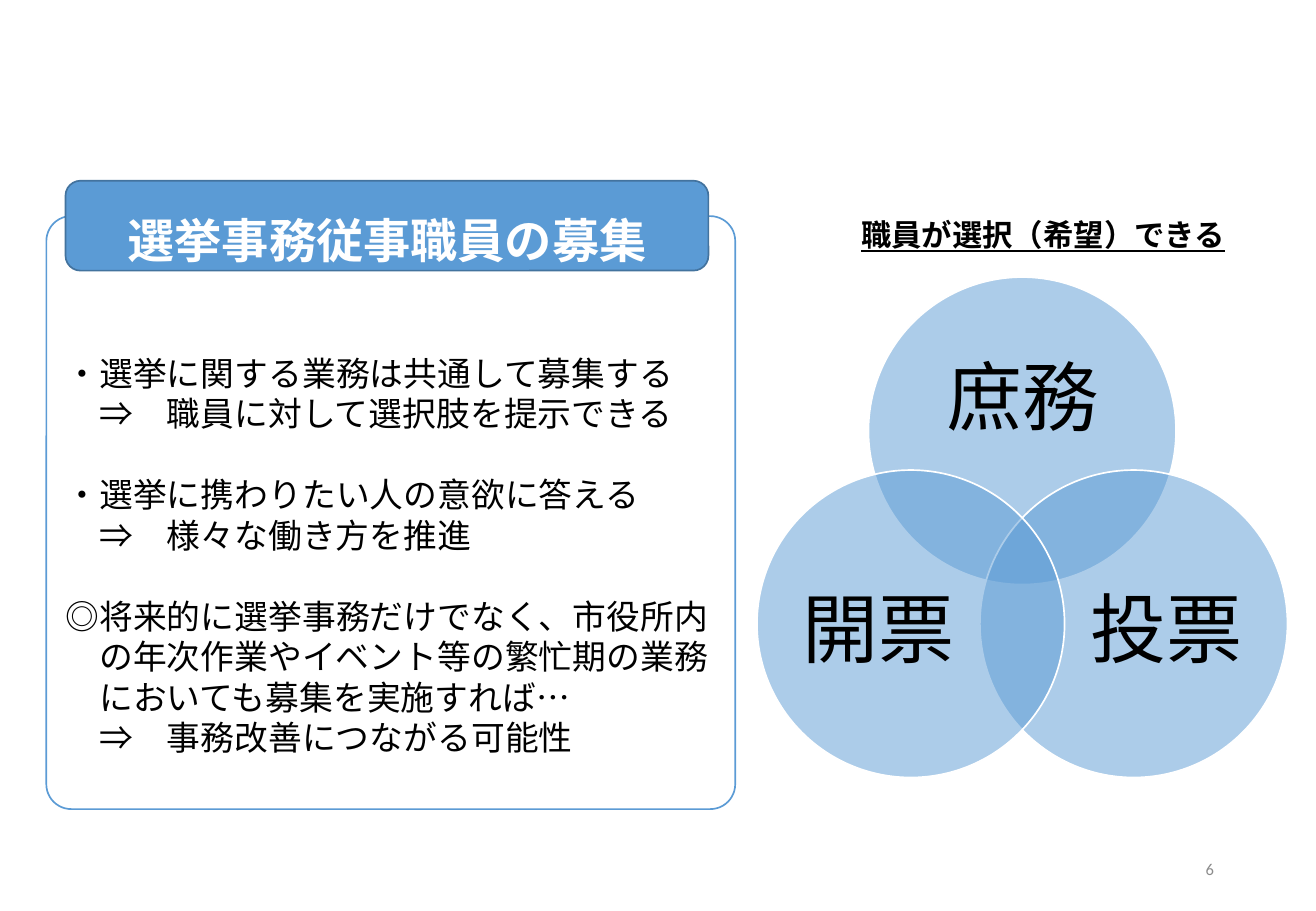
from dataclasses import dataclass
from math import cos, radians, sin

from lxml.etree import SubElement
from pptx import Presentation
from pptx.dml.color import RGBColor as RGB
from pptx.enum.shapes import MSO_SHAPE as Shp
from pptx.enum.text import MSO_ANCHOR as Anchor, MSO_AUTO_SIZE as Fit, PP_ALIGN as Align
from pptx.oxml.ns import qn
from pptx.shapes.autoshape import Shape
from pptx.slide import Slide
from pptx.text.text import TextFrame, _Paragraph as Para
from pptx.util import Cm, Pt


@dataclass(frozen=True)
class Theme:
    blue: RGB = RGB(0x5B, 0x9B, 0xD5)
    dark_blue: RGB = RGB(0x43, 0x73, 0x9E)
    white: RGB = RGB(0xFF, 0xFF, 0xFF)
    black: RGB = RGB(0, 0, 0)
    grey: RGB = RGB(0x8C, 0x8C, 0x8C)
    font: str = "Noto Sans CJK JP"
    number_font: str = "Calibri"
    title: float = 28
    heading: float = 18
    body: float = 20
    label: float = 45
    number: float = 9.8
    leading: float = 24


@dataclass(frozen=True)
class Box:
    left: float
    top: float
    width: float
    height: float

    def lengths(self) -> tuple[Cm, Cm, Cm, Cm]:
        return Cm(self.left), Cm(self.top), Cm(self.width), Cm(self.height)


@dataclass(frozen=True)
class Point:
    text: str
    marked: bool = False
    gap: bool = False


@dataclass(frozen=True)
class Duty:
    name: str
    angle: int
    label: Box


THEME = Theme()
CARD = Box(0.97, 4.52, 14.4, 12.4)
BANNER = Box(1.37, 3.78, 13.44, 1.88)
HEADING = Box(17.75, 4.39, 8.59, 1.02)
NUMBER = Box(19.43, 17.65, 6.2, 1.02)
VENN_X, VENN_Y, VENN_RADIUS, CIRCLE = 21.37, 11.7, 2.69, 6.43

POINTS = [
    Point("・選挙に関する業務は共通して募集する", marked=True),
    Point("⇒　職員に対して選択肢を提示できる"),
    Point("・選挙に携わりたい人の意欲に答える", marked=True, gap=True),
    Point("⇒　様々な働き方を推進"),
    Point("◎将来的に選挙事務だけでなく、市役所内の年次作業やイベント等の繁忙期の業務"
          "においても募集を実施すれば…", marked=True, gap=True),
    Point("⇒　事務改善につながる可能性"),
]
DUTIES = [
    Duty("庶務", -90, Box(19.02, 6.93, 4.72, 2.9)),
    Duty("投票", 30, Box(22.45, 11.48, 3.86, 3.53)),
    Duty("開票", 150, Box(16.43, 11.48, 3.86, 3.53)),
]


def add_run(p: Para, text: str, size: float, color: RGB = THEME.black,
            bold: bool = False, underline: bool = False, font: str = THEME.font) -> None:
    r = p.add_run()
    r.text = text
    r.font.size = Pt(size)
    r.font.bold = bold
    r.font.underline = underline
    r.font.color.rgb = color
    r.font.name = font
    SubElement(r.font._element, qn("a:ea"), typeface=font)


def add_block(s: Slide, kind: Shp, box: Box, fill: RGB, line: RGB) -> Shape:
    sp = s.shapes.add_shape(kind, *box.lengths())
    sp.shadow.inherit = False
    sp.fill.solid()
    sp.fill.fore_color.rgb = fill
    sp.line.color.rgb = line
    sp.line.width = Pt(1)
    return sp


def add_text_box(s: Slide, box: Box, anchor: Anchor = Anchor.TOP) -> TextFrame:
    tf = s.shapes.add_textbox(*box.lengths()).text_frame
    tf.word_wrap = True
    tf.vertical_anchor = anchor
    return tf


def add_card(s: Slide) -> None:
    sp = add_block(s, Shp.ROUNDED_RECTANGLE, CARD, THEME.white, THEME.blue)
    sp.adjustments[0] = 0.042
    tf = sp.text_frame
    tf.word_wrap = True
    tf.vertical_anchor = Anchor.TOP
    tf.margin_top = Cm(2.7)
    for i, point in enumerate(POINTS):
        p = tf.add_paragraph() if i else tf.paragraphs[0]
        p.alignment = Align.LEFT
        p.line_spacing = Pt(THEME.leading)
        p.space_before = Pt(THEME.leading if point.gap else 0)
        pPr = p._p.get_or_add_pPr()
        pPr.set("marL", str(Pt(THEME.body)))
        pPr.set("indent", str(-Pt(THEME.body) if point.marked else 0))
        add_run(p, point.text, THEME.body)


def add_duty(s: Slide, duty: Duty) -> None:
    angle = radians(duty.angle)
    box = Box(VENN_X + VENN_RADIUS * cos(angle) - CIRCLE / 2,
              VENN_Y + VENN_RADIUS * sin(angle) - CIRCLE / 2, CIRCLE, CIRCLE)
    sp = add_block(s, Shp.OVAL, box, THEME.blue, THEME.white)
    color = sp._element.spPr.find(qn("a:solidFill")).find(qn("a:srgbClr"))
    SubElement(color, qn("a:alpha"), val="50000")
    tf = add_text_box(s, duty.label, Anchor.MIDDLE)
    tf.margin_left = tf.margin_right = tf.margin_top = tf.margin_bottom = 0
    p = tf.paragraphs[0]
    p.alignment = Align.CENTER
    p.line_spacing = 0.9
    add_run(p, duty.name, THEME.label)


def add_title(s: Slide) -> None:
    add_block(s, Shp.ROUNDED_RECTANGLE, BANNER, THEME.blue, THEME.dark_blue)
    sp = s.shapes.title
    sp.left, sp.top, sp.width, sp.height = BANNER.lengths()
    s.shapes._spTree.append(sp._element)
    tf = sp.text_frame
    tf.auto_size = Fit.NONE
    tf.word_wrap = True
    tf.vertical_anchor = Anchor.MIDDLE
    p = tf.paragraphs[0]
    p.alignment = Align.CENTER
    p.line_spacing = 1.5
    p.space_before = Pt(0)
    add_run(p, "選挙事務従事職員の募集", THEME.title, THEME.white, bold=True)


def main() -> None:
    prs = Presentation()
    prs.slide_width, prs.slide_height = Cm(27.51), Cm(19.05)
    s = prs.slides.add_slide(prs.slide_layouts[5])
    add_card(s)
    p = add_text_box(s, NUMBER, Anchor.MIDDLE).paragraphs[0]
    p.alignment = Align.RIGHT
    add_run(p, "6", THEME.number, THEME.grey, font=THEME.number_font)
    for duty in DUTIES:
        add_duty(s, duty)
    add_title(s)
    p = add_text_box(s, HEADING).paragraphs[0]
    add_run(p, "職員が選択（希望）できる", THEME.heading, bold=True, underline=True)
    prs.save("out.pptx")


if __name__ == "__main__":
    main()
